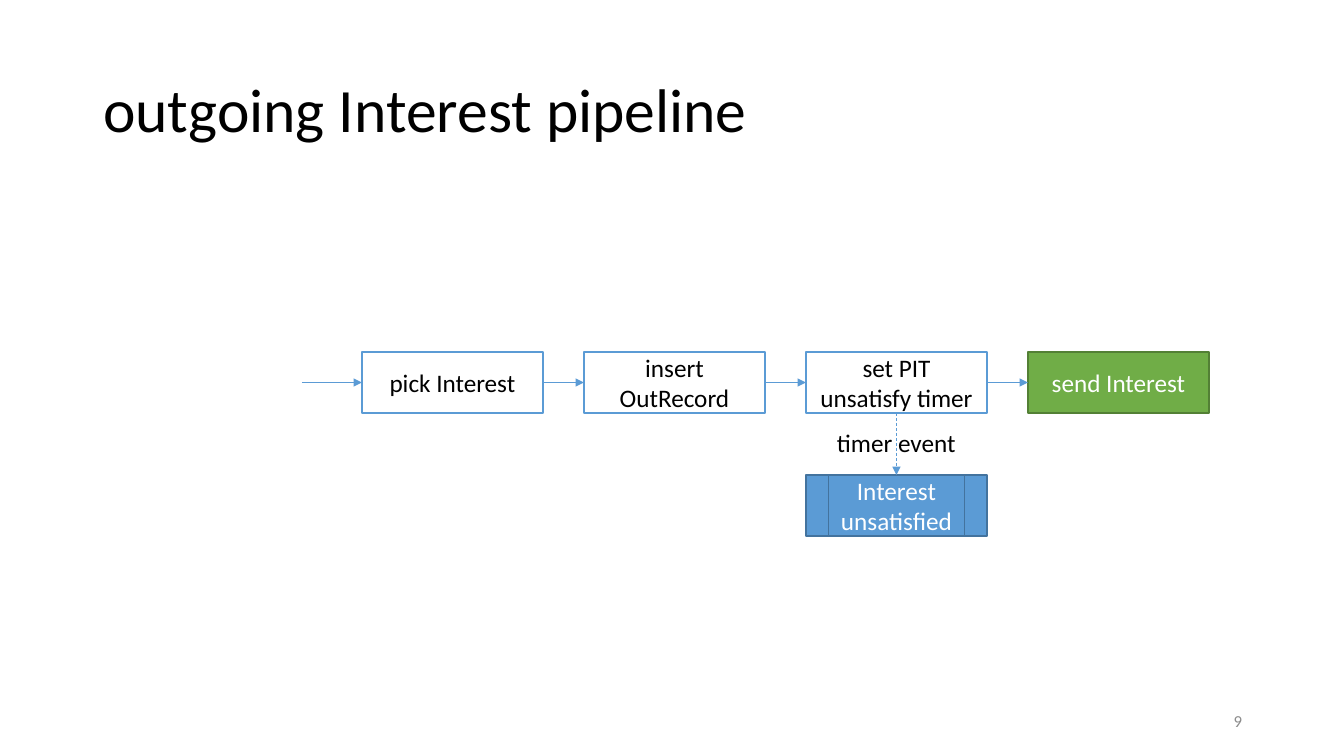
from lxml import etree
from pptx import Presentation
from pptx import util as u
from pptx.dml.color import RGBColor
from pptx.enum import dml, shapes, text
from pptx.oxml import ns

SCALE = u.Inches(1) / 100.8
FONT = "Calibri"
COLOURS = {
    "black": "000000", "white": "FFFFFF", "grey": "8C8C8C",
    "blue": "5B9BD5", "dark blue": "43739E",
    "green": "70AD47", "dark green": "538035",
}
STEPS = [
    ("pick Interest", "white", "blue", "black"),
    ("insert OutRecord", "white", "blue", "black"),
    ("set PIT unsatisfy timer", "white", "blue", "black"),
    ("send Interest", "green", "dark green", "white"),
]
BOX_WIDTH, BOX_HEIGHT, PITCH = 181, 61, 222
TOP, LEFT, BOTTOM, RIGHT = range(4)


def px(*lengths):
    """Turn px lengths into EMU."""
    return [u.Emu(round(length * SCALE)) for length in lengths]


def rgb(name):
    """Look up a named colour."""
    return RGBColor.from_string(COLOURS[name])


def write(shape, wording, size, colour, align, anchor=text.MSO_ANCHOR.MIDDLE, wrap=True):
    """Put one formatted paragraph into a shape and return it."""
    frame = shape.text_frame
    frame.text = wording
    frame.word_wrap = wrap
    frame.vertical_anchor = anchor
    paragraph = frame.paragraphs[0]
    paragraph.alignment = align
    font = paragraph.runs[0].font
    font.name, font.size, font.color.rgb = FONT, u.Pt(size), rgb(colour)
    return paragraph


def add_title(slide, box):
    """Place the slide title."""
    title = slide.shapes.title
    title.left, title.top, title.width, title.height = px(*box)
    paragraph = write(title, "outgoing Interest pipeline", 44, "black", text.PP_ALIGN.LEFT)
    paragraph.line_spacing = 0.9
    title.text_frame.auto_size = text.MSO_AUTO_SIZE.NONE


def add_page_number(slide, box):
    """Place the page number."""
    write(slide.shapes.add_textbox(*px(*box)), "9", 12, "grey", text.PP_ALIGN.RIGHT)


def add_box(slide, kind, left, top, wording, fill, line, colour):
    """Draw one labelled pipeline box."""
    shape = slide.shapes.add_shape(kind, *px(left, top, BOX_WIDTH, BOX_HEIGHT))
    shape.shadow.inherit = False
    shape.fill.solid()
    shape.fill.fore_color.rgb = rgb(fill)
    shape.line.color.rgb = rgb(line)
    shape.line.width = u.Pt(1)
    write(shape, wording, 18, colour, text.PP_ALIGN.CENTER)
    return shape


def add_arrow(slide, start, end, dashed=False):
    """Draw a thin arrow between two points."""
    arrow = slide.shapes.add_connector(shapes.MSO_CONNECTOR.STRAIGHT, *px(*start, *end))
    arrow.line.color.rgb = rgb("blue")
    arrow.line.width = u.Pt(0.5)
    if dashed:
        arrow.line.dash_style = dml.MSO_LINE.DASH
    etree.SubElement(arrow.line._get_or_add_ln(), ns.qn("a:tailEnd"), type="triangle")
    etree.SubElement(arrow._element.spPr, ns.qn("a:effectLst"))
    return arrow


def add_pipeline(slide, left, top):
    """Draw the row of steps, each with its incoming arrow."""
    middle = top + BOX_HEIGHT / 2
    steps = []
    for index, step in enumerate(STEPS):
        box_left = left + index * PITCH
        shape = add_box(slide, shapes.MSO_SHAPE.RECTANGLE, box_left, top, *step)
        start = box_left - PITCH + BOX_WIDTH if steps else left - 60
        arrow = add_arrow(slide, (start, middle), (box_left, middle))
        if steps:
            arrow.begin_connect(steps[-1], RIGHT)
        arrow.end_connect(shape, LEFT)
        steps.append(shape)
    return steps


def add_timer_branch(slide, timer, left, top):
    """Draw the process that the timer starts, below its step."""
    process_top = top + 123
    process = add_box(slide, shapes.MSO_SHAPE.FLOWCHART_PREDEFINED_PROCESS, left, process_top,
                      "Interest unsatisfied", "blue", "dark blue", "white")
    centre = left + BOX_WIDTH / 2
    arrow = add_arrow(slide, (centre, top + BOX_HEIGHT), (centre, process_top), dashed=True)
    arrow.begin_connect(timer, BOTTOM)
    arrow.end_connect(process, TOP)
    label = slide.shapes.add_textbox(*px(left + 21, top + 70, 141, 40))
    write(label, "timer event", 18, "black", text.PP_ALIGN.LEFT, text.MSO_ANCHOR.TOP, False)
    label.text_frame.auto_size = text.MSO_AUTO_SIZE.SHAPE_TO_FIT_TEXT


def main():
    """Build and save the presentation."""
    presentation = Presentation()
    presentation.slide_width, presentation.slide_height = px(1344, 756)
    slide = presentation.slides.add_slide(presentation.slide_layouts[5])
    add_title(slide, (93, 40, 1159, 146))
    add_page_number(slide, (950, 701, 302, 40))
    left, top = 362, 352
    steps = add_pipeline(slide, left, top)
    add_timer_branch(slide, steps[2], left + 2 * PITCH, top)
    presentation.save("out.pptx")


if __name__ == "__main__":
    main()
